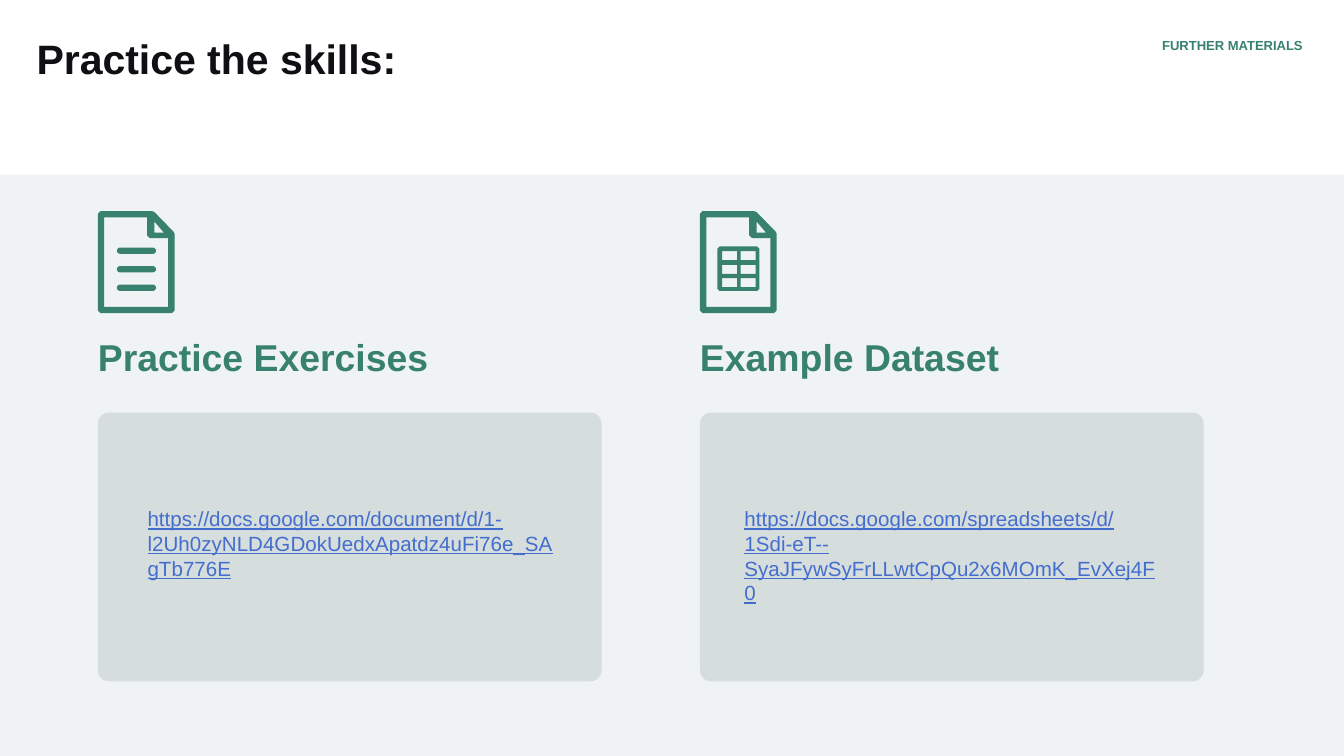
from pptx import Presentation
from pptx.dml.color import RGBColor
from pptx.enum.shapes import MSO_SHAPE
from pptx.enum.text import MSO_ANCHOR, MSO_AUTO_SIZE, PP_ALIGN
from pptx.util import Cm, Pt

COLORS = {
    "ink": "0F0F14",
    "green": "37816E",
    "link": "446DCD",
    "band": "F0F3F3",
    "card": "D5DDDD",
}

PAGE_OUTLINE = [(0, 5), (5, 0), (102, 0), (107, 2), (143, 39), (145, 43),
                (145, 188), (140, 193), (5, 193), (0, 188)]
PAGE_FOLD = [(107, 20), (107, 41), (125, 41)]
PAGE_INSIDE = [(12, 12), (12, 181), (133, 181), (133, 51), (98, 51), (93, 46), (93, 12)]
GRID_OUTLINE = [(0, 4), (4, 0), (75, 0), (79, 4), (79, 80), (75, 84), (4, 84), (0, 80)]
GRID_CELLS = [[(x, y), (x, y + 17), (x + 28, y + 17), (x + 28, y)]
              for x in (9, 44) for y in (9, 35, 60)]


class SlideBuilder:
    font_name = "Arial"

    def __init__(self, slide):
        self.slide = slide

    def paint(self, shape, color):
        shape.shadow.inherit = False
        shape.fill.solid()
        shape.fill.fore_color.rgb = RGBColor.from_string(COLORS[color])
        shape.line.fill.background()

    def box(self, left, top, width, height, color, rounding=0.0):
        kind = MSO_SHAPE.ROUNDED_RECTANGLE if rounding else MSO_SHAPE.RECTANGLE
        shape = self.slide.shapes.add_shape(kind, Cm(left), Cm(top), Cm(width), Cm(height))
        if rounding:
            shape.adjustments[0] = rounding
        self.paint(shape, color)

    def outline(self, left, top, contours, color="green"):
        first, *others = contours
        builder = self.slide.shapes.build_freeform(*first[0], scale=Cm(0.01))
        builder.add_line_segments(first[1:])
        for contour in others:
            builder.move_to(*contour[0])
            builder.add_line_segments(contour[1:])
        self.paint(builder.convert_to_shape(Cm(left), Cm(top)), color)

    def fill_text(self, shape, text, color, margins=(0, 0, 0, 0),
                  align=PP_ALIGN.LEFT, spacing=1.0, **font):
        frame = shape.text_frame
        sides = ("margin_left", "margin_top", "margin_right", "margin_bottom")
        frame_format = dict(zip(sides, map(Cm, margins)))
        frame_format.update(text=text, word_wrap=True, auto_size=MSO_AUTO_SIZE.NONE,
                            vertical_anchor=MSO_ANCHOR.TOP)
        for name, value in frame_format.items():
            setattr(frame, name, value)
        paragraph = frame.paragraphs[0]
        paragraph.alignment = align
        paragraph.line_spacing = spacing
        run_font = paragraph.runs[0].font
        for name, value in {"name": self.font_name, **font}.items():
            setattr(run_font, name, value)
        run_font.color.rgb = RGBColor.from_string(COLORS[color])

    def title(self, left, top, width, height, text):
        shape = self.slide.shapes.title
        position = {"left": left, "top": top, "width": width, "height": height}
        for name, value in position.items():
            setattr(shape, name, Cm(value))
        self.fill_text(shape, text, "ink", (0, 0, 0.25, 0.25), spacing=0.9,
                       size=Pt(22), bold=True)

    def text(self, left, top, width, height, text, color, **style):
        shape = self.slide.shapes.add_textbox(Cm(left), Cm(top), Cm(width), Cm(height))
        self.fill_text(shape, text, color, **style)

    def page_icon(self, left, top):
        self.outline(left, top, [PAGE_OUTLINE, PAGE_FOLD, PAGE_INSIDE])

    def document_icon(self, left, top):
        self.page_icon(left, top)
        for row in range(3):
            self.box(left + 0.36, top + 0.69 + row * 0.35, 0.74, 0.12, "green", 0.5)

    def spreadsheet_icon(self, left, top):
        self.page_icon(left, top)
        self.outline(left + 0.33, top + 0.67, [GRID_OUTLINE, *GRID_CELLS])


def main():
    presentation = Presentation()
    presentation.slide_width = Cm(25.4)
    presentation.slide_height = Cm(14.29)
    builder = SlideBuilder(presentation.slides.add_slide(presentation.slide_layouts[5]))

    builder.box(0, 3.3, 25.4, 10.99, "band")
    builder.title(0.69, 0.74, 20.29, 1.5, "Practice the skills:")
    builder.text(16.82, 0.74, 7.8, 0.91, "FURTHER MATERIALS", "green",
                 align=PP_ALIGN.RIGHT, spacing=0.9, size=Pt(7), bold=True)

    columns = [
        (1.85, 2.54, builder.document_icon, "Practice Exercises",
         "https://docs.google.com/document/d/1-l2Uh0zyNLD4GDokUedxApatdz4uFi76e_SAgTb776E"),
        (13.23, 13.82, builder.spreadsheet_icon, "Example Dataset",
         "https://docs.google.com/spreadsheets/d/1Sdi-eT--SyaJFywSyFrLLwtCpQu2x6MOmK_EvXej4F0"),
    ]
    for left, address_left, draw_icon, heading, address in columns:
        draw_icon(left, 3.99)
        builder.text(left, 6.32, 8.53, 0.86, heading, "green", size=Pt(20), bold=True)
        builder.box(left, 7.8, 9.52, 5.08, "card", 0.041)
        builder.text(address_left, 9.32, 8.33, 1.93, address, "link",
                     margins=(0.25,) * 4, size=Pt(11), underline=True)

    presentation.save("out.pptx")


if __name__ == "__main__":
    main()
